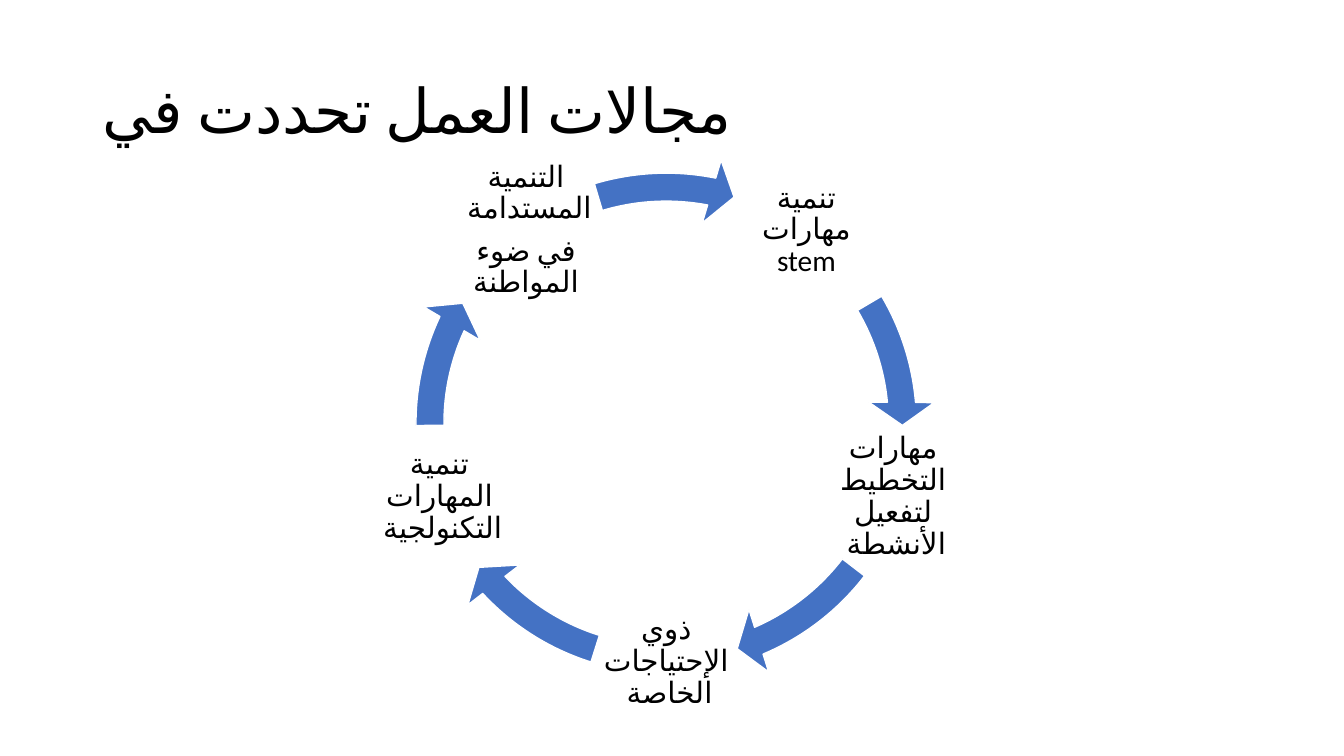
import math
from dataclasses import dataclass

import lxml.etree
import pptx
import pptx.dml.color
import pptx.enum.shapes
import pptx.enum.text
import pptx.oxml.ns
import pptx.util

Cm = pptx.util.Cm
Pt = pptx.util.Pt
Align = pptx.enum.text.PP_ALIGN
Anchor = pptx.enum.text.MSO_ANCHOR


@dataclass(frozen=True)
class Theme:
    font: str = "Calibri"
    ink: str = "000000"
    blue: str = "4472C4"
    white: str = "FFFFFF"
    head: int = 44
    body: int = 21
    gap: float = 7.35


THEME = Theme()

# Cycle geometry in centimetres
MID_X, MID_Y = 16.79, 10.67
RADIUS = 6.01
BOX = 3.61
RING = 13.56
FIRST = -54

# Label paragraphs, then the start and end angles of the arrow that follows
STEPS = [
    (["تنمية مهارات stem"], 329.44, 354.89),
    (["مهارات التخطيط لتفعيل الأنشطة "], 37.56, 66.91),
    (["ذوي الإحتياجات الخاصة "], 107.49, 136.85),
    (["تنمية المهارات التكنولجية "], 179.51, 204.97),
    (["التنمية المستدامة ", "في ضوء المواطنة"], 253.31, 281.1),
]


def color(code):
    return pptx.dml.color.RGBColor.from_string(code)


def add_run(para, text, size):
    run = para.add_run()
    run.text = text
    run.font.name = THEME.font
    run.font.size = Pt(size)
    run.font.color.rgb = color(THEME.ink)
    # Arabic script takes its own font and language
    props = run._r.get_or_add_rPr()
    props.set("lang", "ar-EG")
    script = lxml.etree.SubElement(props, pptx.oxml.ns.qn("a:cs"))
    script.set("typeface", THEME.font)


def add_title(slide, text):
    title = slide.shapes.title
    title.left, title.top = Cm(2.33), Cm(1.01)
    title.width, title.height = Cm(29.21), Cm(3.68)
    title.text_frame.vertical_anchor = Anchor.MIDDLE
    para = title.text_frame.paragraphs[0]
    para.alignment = Align.LEFT
    para.line_spacing = 0.9
    add_run(para, text, THEME.head)


def add_label(slide, lines, angle):
    turn = math.radians(angle)
    left = MID_X + RADIUS * math.cos(turn) - BOX / 2
    top = MID_Y + RADIUS * math.sin(turn) - BOX / 2
    label = slide.shapes.add_textbox(Cm(left), Cm(top), Cm(BOX), Cm(BOX))
    frame = label.text_frame
    frame.word_wrap = True
    frame.vertical_anchor = Anchor.MIDDLE
    frame.margin_left = frame.margin_right = Cm(0.07)
    frame.margin_top = frame.margin_bottom = Cm(0.07)
    for index, line in enumerate(lines):
        para = frame.add_paragraph() if index else frame.paragraphs[0]
        para.alignment = Align.CENTER
        para.line_spacing = 0.9
        para.space_after = Pt(THEME.gap)
        # Right-to-left reading order
        para._p.get_or_add_pPr().set("rtl", "1")
        add_run(para, line, THEME.body)


def add_arrow(slide, start, end):
    arrow = slide.shapes.add_shape(
        pptx.enum.shapes.MSO_SHAPE.CIRCULAR_ARROW,
        Cm(MID_X - RING / 2), Cm(MID_Y - RING / 2), Cm(RING), Cm(RING))
    arrow.shadow.inherit = False
    # One degree is 0.6 of an adjustment unit
    values = (0.052, 5.6 * 0.6, end * 0.6, start * 0.6, 0.061)
    for index, value in enumerate(values):
        arrow.adjustments[index] = value
    arrow.fill.solid()
    arrow.fill.fore_color.rgb = color(THEME.blue)
    arrow.line.color.rgb = color(THEME.white)
    arrow.line.width = Pt(1)


def main():
    deck = pptx.Presentation()
    deck.slide_width, deck.slide_height = Cm(33.87), Cm(19.05)
    slide = deck.slides.add_slide(deck.slide_layouts[5])

    # Heading
    add_title(slide, "مجالات العمل تحددت في")

    # Cycle of labels and arrows
    for index, (lines, start, end) in enumerate(STEPS):
        add_label(slide, lines, FIRST + index * 360 / len(STEPS))
        add_arrow(slide, start, end)

    deck.save("out.pptx")


if __name__ == "__main__":
    main()
